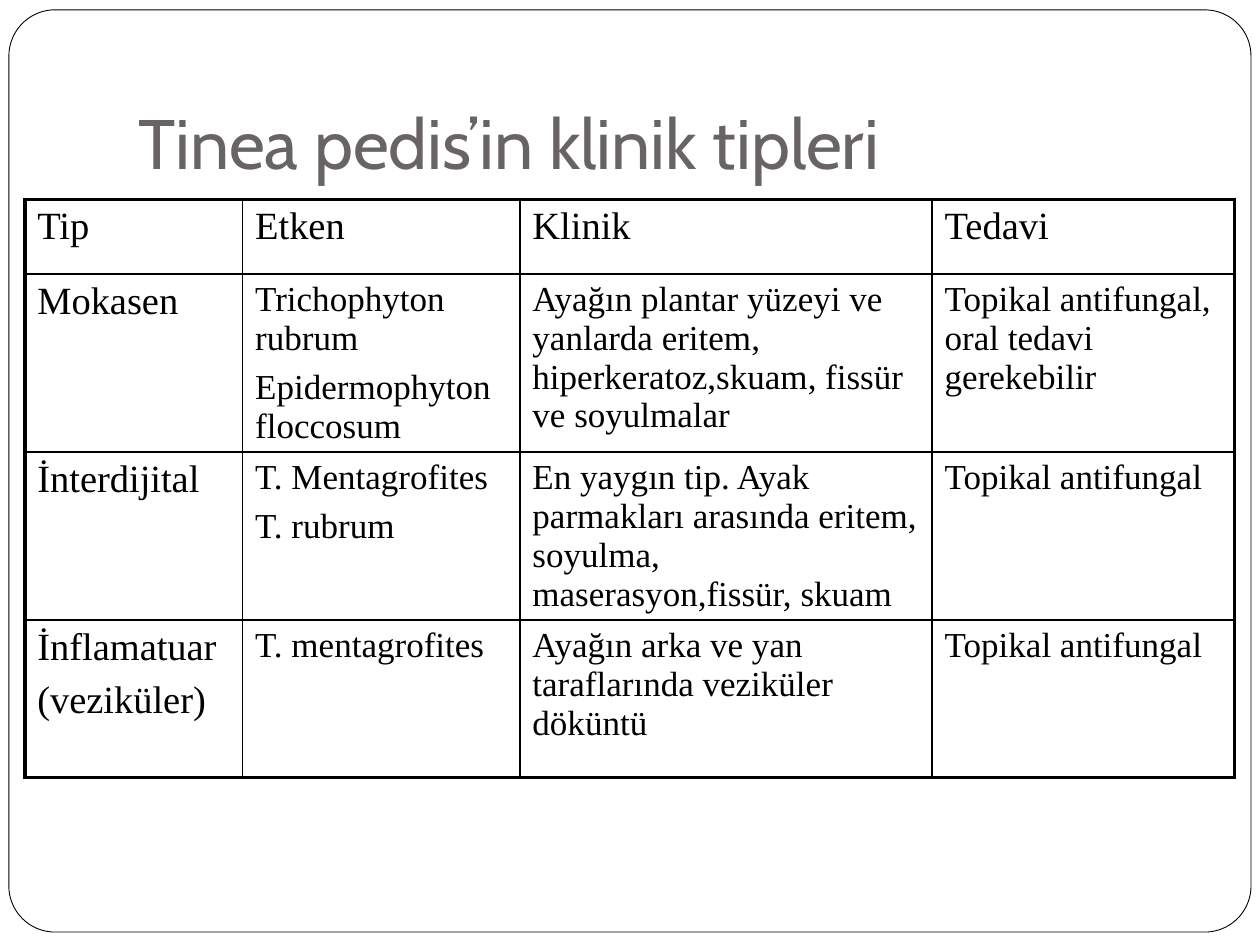
import pptx
import pptx.util
import pptx.dml.color
import pptx.enum.shapes
import pptx.enum.text
import pptx.oxml
import pptx.oxml.ns
from lxml import etree
from pptx.util import Cm, Pt

COLORS = {"paper": "FFFFFF", "ink": "000000", "title": "696464"}
COL_WIDTHS = [4.39, 5.59, 8.31, 6.1]
ROW_HEIGHTS = [1.5, 3.18, 3.18, 3.18]
ROWS = [
    ["Tip", "Etken", "Klinik", "Tedavi"],
    ["Mokasen", "Trichophyton rubrum\nEpidermophyton floccosum",
     "Ayağın plantar yüzeyi ve yanlarda eritem, hiperkeratoz,skuam, fissür ve soyulmalar",
     "Topikal antifungal, oral tedavi gerekebilir"],
    ["İnterdijital", "T. Mentagrofites\nT. rubrum",
     "En yaygın tip. Ayak parmakları arasında eritem, soyulma, maserasyon,fissür, skuam",
     "Topikal antifungal"],
    ["İnflamatuar\n(veziküler)", "T. mentagrofites",
     "Ayağın arka ve yan taraflarında veziküler döküntü", "Topikal antifungal"],
]


def rgb(name):
    return pptx.dml.color.RGBColor.from_string(COLORS[name])


def format_paragraph(p, font, size, color):
    for r in p.runs:
        r.font.name = font
        r.font.size = Pt(size)
        r.font.color.rgb = rgb(color)


def add_title(s, text):
    title = s.shapes.title
    title.left, title.top, title.width, title.height = Cm(2.54), Cm(0.76), Cm(21.59), Cm(3.18)
    tf = title.text_frame
    tf.text = text
    tf.word_wrap = True
    tf.auto_size = pptx.enum.text.MSO_AUTO_SIZE.NONE
    tf.vertical_anchor = pptx.enum.text.MSO_ANCHOR.BOTTOM
    tf.margin_bottom = Cm(0.25)
    p = tf.paragraphs[0]
    p.alignment = pptx.enum.text.PP_ALIGN.LEFT
    format_paragraph(p, "Cabin", 40, "title")


def add_frame(s):
    sp = s.shapes.add_shape(pptx.enum.shapes.MSO_SHAPE.ROUNDED_RECTANGLE,
                            Cm(0.18), Cm(0.2), Cm(25.04), Cm(18.59))
    sp.adjustments[0] = 0.05
    sp.shadow.inherit = False
    sp.fill.solid()
    sp.fill.fore_color.rgb = rgb("paper")
    sp.line.color.rgb = rgb("ink")
    sp.line.width = Pt(0.5)
    s.shapes.title.element.addprevious(sp.element)


def set_border(cell, side, width):
    qn = pptx.oxml.ns.qn
    tc_pr = cell._tc.get_or_add_tcPr()
    ln = etree.SubElement(tc_pr, qn(f"a:ln{side}"), w=str(Pt(width)))
    fill = etree.SubElement(ln, qn("a:solidFill"))
    etree.SubElement(fill, qn("a:srgbClr"), val=COLORS["ink"])


def fill_cell(cell, text, size, outer_sides):
    for side in "LRTB":
        set_border(cell, side, 2.25 if side in outer_sides else 1)
    cell.fill.background()
    cell.text_frame.text = text
    for p in cell.text_frame.paragraphs:
        p.space_before = Pt(5.8)
        format_paragraph(p, "Times New Roman", size, "ink")


def add_table(s):
    n_rows, n_cols = len(ROWS), len(COL_WIDTHS)
    table = s.shapes.add_table(n_rows, n_cols, Cm(0.5), Cm(4.02),
                               Cm(sum(COL_WIDTHS)), Cm(sum(ROW_HEIGHTS))).table
    table.first_row = False
    table.horz_banding = False
    for column, width in zip(table.columns, COL_WIDTHS):
        column.width = Cm(width)
    for row, height in zip(table.rows, ROW_HEIGHTS):
        row.height = Cm(height)
    for i, texts in enumerate(ROWS):
        for j, text in enumerate(texts):
            edges = {"L": j == 0, "R": j == n_cols - 1, "T": i == 0, "B": i == n_rows - 1}
            outer_sides = [side for side, is_outer in edges.items() if is_outer]
            size = 22 if i == 0 or j == 0 else 20
            fill_cell(table.cell(i, j), text, size, outer_sides)


def main():
    prs = pptx.Presentation()
    prs.slide_width, prs.slide_height = Cm(25.4), Cm(19.05)
    s = prs.slides.add_slide(prs.slide_layouts[5])
    add_frame(s)
    add_title(s, "Tinea pedis’in klinik tipleri")
    add_table(s)
    prs.save("out.pptx")


if __name__ == "__main__":
    main()
